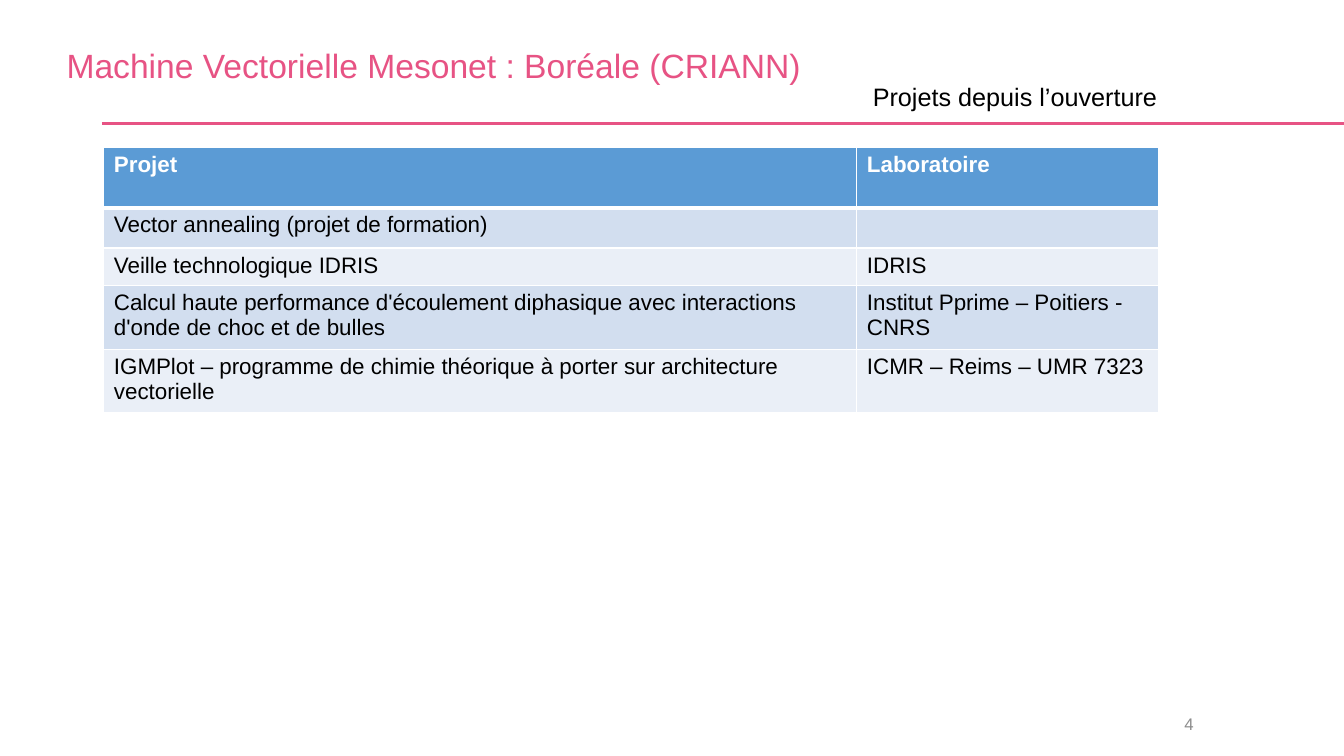
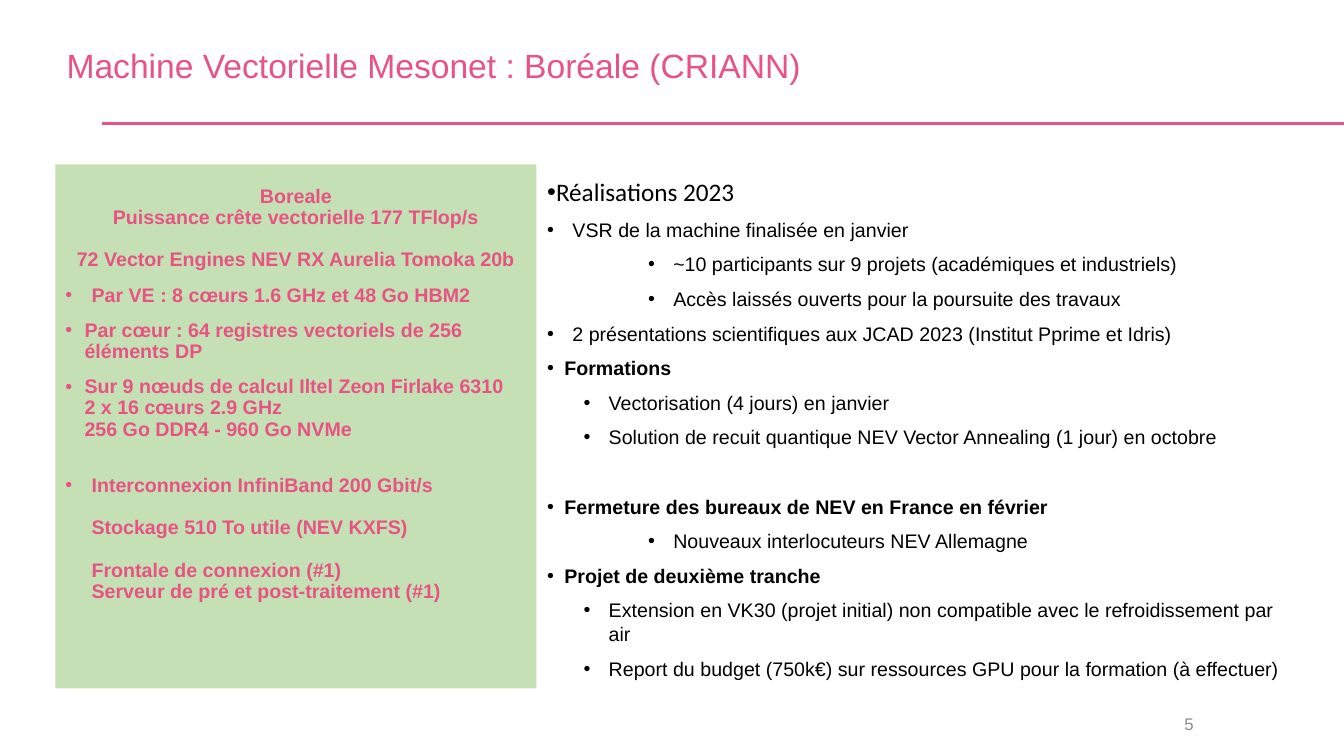
from lxml import etree
from pptx import Presentation
from pptx import util as u
from pptx.dml.color import RGBColor
from pptx.enum import shapes, text
from pptx.oxml import ns

COLORS = {
    "pink": "E75384", "green": "C5E0B4", "white": "FFFFFF", "black": "000000",
    "grey": "8C8C8C", "header": "5B9BD5", "band_dark": "D2DEEF", "band_light": "EAEFF7",
}
WIDTH, HEIGHT = u.Inches(13.33), u.Inches(7.5)
TITLE = "Machine Vectorielle Mesonet : Boréale (CRIANN)"
FONT = "Arial"

# Indent styles: left margin and hanging indent, in inches
INDENTS = {
    "plain": (0, 0), "item": (0.25, -0.25), "topic": (0.17, -0.17),
    "detail": (0.61, -0.25), "deep": (1.25, -0.25),
    "spec": (0.26, -0.26), "tight": (0.19, -0.19),
    "spec_more": (0.26, 0), "tight_more": (0.19, 0),
}

PROJECTS = [
    ("Projet", "Laboratoire"),
    ("Vector annealing (projet de formation)", ""),
    ("Veille technologique IDRIS", "IDRIS"),
    ("Calcul haute performance d'écoulement diphasique avec interactions "
     "d'onde de choc et de bulles", "Institut Pprime – Poitiers - CNRS"),
    ("IGMPlot – programme de chimie théorique à porter sur architecture vectorielle",
     "ICMR – Reims – UMR 7323"),
]

# Each line: indent style, space before in points, wording
MACHINE = [
    ("plain", 0, "Boreale"),
    ("plain", 0, "Puissance crête vectorielle 177 TFlop/s"),
    ("plain", 15.1, "72 Vector Engines NEV RX Aurelia Tomoka 20b"),
    ("spec", 10, "Par VE : 8 cœurs 1.6 GHz et 48 Go HBM2"),
    ("tight", 10, "Par cœur : 64 registres vectoriels de 256 éléments DP"),
    ("tight", 10, "Sur 9 nœuds de calcul Iltel Zeon Firlake 6310"),
    ("tight_more", 0, "2 x 16 cœurs 2.9 GHz"),
    ("tight_more", 0, "256 Go DDR4 - 960 Go NVMe"),
    ("spec", 25.1, "Interconnexion InfiniBand 200 Gbit/s"),
    ("spec_more", 15.1, "Stockage 510 To utile (NEV KXFS)"),
    ("spec_more", 15.1, "Frontale de connexion (#1)"),
    ("spec_more", 0, "Serveur de pré et post-traitement (#1)"),
]

STEP, GAP = 7.9, 32.6
RESULTS = [
    ("plain", 0, "Réalisations 2023"),
    ("item", STEP, "VSR de la machine finalisée en janvier"),
    ("deep", STEP, "~10 participants sur 9 projets (académiques et industriels)"),
    ("deep", STEP, "Accès laissés ouverts pour la poursuite des travaux"),
    ("item", STEP, "2 présentations scientifiques aux JCAD 2023 (Institut Pprime et Idris)"),
    ("topic", STEP, "Formations"),
    ("detail", STEP, "Vectorisation (4 jours) en janvier"),
    ("detail", STEP, "Solution de recuit quantique NEV Vector Annealing (1 jour) en octobre"),
    ("topic", GAP, "Fermeture des bureaux de NEV en France en février"),
    ("deep", STEP, "Nouveaux interlocuteurs NEV Allemagne"),
    ("topic", STEP, "Projet de deuxième tranche"),
    ("detail", STEP, "Extension en VK30 (projet initial) non compatible avec le "
                     "refroidissement par air"),
    ("detail", STEP, "Report du budget (750k€) sur ressources GPU pour la formation "
                     "(à effectuer)"),
]


def rgb(name):
    return RGBColor.from_string(COLORS[name])


def across(percent):
    return int(WIDTH * percent / 100)


def down(percent):
    return int(HEIGHT * percent / 100)


def area(left, top, width, height):
    """Turn percentages of the slide into a position and size."""
    return across(left), down(top), across(width), down(height)


def write(para, words, size, color, bold=False, font=FONT):
    span = para.add_run()
    span.text = words
    span.font.name, span.font.size, span.font.bold = font, u.Pt(size), bold
    span.font.color.rgb = rgb(color)


def set_indent(para, style, color, bullet):
    props = para._p.get_or_add_pPr()
    margin, hanging = INDENTS[style]
    props.set("marL", str(u.Inches(margin)))
    props.set("indent", str(u.Inches(hanging)))
    if bullet:
        tint = etree.SubElement(props, ns.qn("a:buClr"))
        etree.SubElement(tint, ns.qn("a:srgbClr"), val=COLORS[color])
        etree.SubElement(props, ns.qn("a:buFont"), typeface=FONT)
        etree.SubElement(props, ns.qn("a:buChar"), char="•")
    else:
        etree.SubElement(props, ns.qn("a:buNone"))


def add_text(page, place, wrap=True):
    frame = page.shapes.add_textbox(*area(*place)).text_frame
    frame.word_wrap = wrap
    return frame


def add_panel(page, place, color):
    box = page.shapes.add_shape(shapes.MSO_SHAPE.RECTANGLE, *area(*place))
    box.shadow.inherit = False
    box.fill.solid()
    box.fill.fore_color.rgb = rgb(color)
    box.line.fill.background()
    return box.text_frame


def next_para(frame, index):
    return frame.add_paragraph() if index else frame.paragraphs[0]


def add_frame(deck, number):
    """Add a page with the shared title, rule and page number."""
    page = deck.slides.add_slide(deck.slide_layouts[6])
    rule = page.shapes.add_connector(
        shapes.MSO_CONNECTOR.STRAIGHT, across(7.58), down(16.3), WIDTH, down(16.3))
    rule.line.color.rgb = rgb("pink")
    rule.line.width = u.Pt(2.25)
    etree.SubElement(rule._element.spPr, ns.qn("a:effectLst"))

    title = add_panel(page, (3.08, 4.13, 58.36, 9.73), "white")
    title.vertical_anchor = text.MSO_ANCHOR.MIDDLE
    para = title.paragraphs[0]
    para.alignment, para.line_spacing = text.PP_ALIGN.CENTER, 0.9
    write(para, TITLE, 24, "pink")

    footer = add_text(page, (88.07, 94.8, 0.75, 2), wrap=False)
    footer.margin_left = footer.margin_right = footer.margin_top = footer.margin_bottom = 0
    footer.vertical_anchor = text.MSO_ANCHOR.MIDDLE
    footer.paragraphs[0].alignment = text.PP_ALIGN.RIGHT
    write(footer.paragraphs[0], str(number), 12, "grey")
    return page


def set_borders(cell, top, bottom):
    props = cell._tc.get_or_add_tcPr()
    for side, points in (("L", 1), ("R", 1), ("T", top), ("B", bottom)):
        line = etree.SubElement(props, ns.qn(f"a:ln{side}"), w=str(u.Pt(points)))
        fill = etree.SubElement(line, ns.qn("a:solidFill"))
        etree.SubElement(fill, ns.qn("a:srgbClr"), val=COLORS["white"])


def add_projects(page):
    widths, heights = (56.03, 22.43), (8, 4.93, 4.93, 8, 8)
    place = area(7.73, 19.47, sum(widths), sum(heights))
    table = page.shapes.add_table(len(heights), len(widths), *place).table
    for column, width in zip(table.columns, widths):
        column.width = across(width)
    for index, (row, height, values) in enumerate(zip(table.rows, heights, PROJECTS)):
        row.height = down(height)
        header = index == 0
        fill = "header" if header else ("band_light", "band_dark")[index % 2]
        for cell, value in zip(row.cells, values):
            set_borders(cell, 3 if index == 1 else 1, 3 if header else 1)
            cell.fill.solid()
            cell.fill.fore_color.rgb = rgb(fill)
            write(cell.text_frame.paragraphs[0], value, 16,
                  "white" if header else "black", header)


def fill_machine(frame):
    frame.margin_top = u.Inches(0.22)
    frame.vertical_anchor = text.MSO_ANCHOR.TOP
    for index, (style, before, words) in enumerate(MACHINE):
        para = next_para(frame, index)
        para.alignment = text.PP_ALIGN.CENTER if style == "plain" else text.PP_ALIGN.LEFT
        para.line_spacing, para.space_before = 0.9, u.Pt(before)
        set_indent(para, style, "pink", style in ("spec", "tight"))
        write(para, words, 14, "pink", True)


def fill_results(frame):
    for index, (style, before, words) in enumerate(RESULTS):
        para = next_para(frame, index)
        para.space_before = u.Pt(before)
        heading = style == "plain"
        if heading:
            para.line_spacing = u.Pt(26.7)
        set_indent(para, style, "black", True)
        write(para, words, 18 if heading else 14, "black", style == "topic",
              "Calibri" if heading else FONT)


def main():
    deck = Presentation()
    deck.slide_width, deck.slide_height = WIDTH, HEIGHT

    page = add_frame(deck, 4)
    add_projects(page)
    subtitle = add_text(page, (64.2, 10.13, 22.88, 5.33), wrap=False)
    write(subtitle.paragraphs[0], "Projets depuis l’ouverture", 18, "black")

    page = add_frame(deck, 5)
    fill_machine(add_panel(page, (4.13, 21.73, 35.78, 69.33), "green"))
    fill_results(add_text(page, (39.98, 21.73, 57.6, 69.33)))

    deck.save("out.pptx")


if __name__ == "__main__":
    main()
